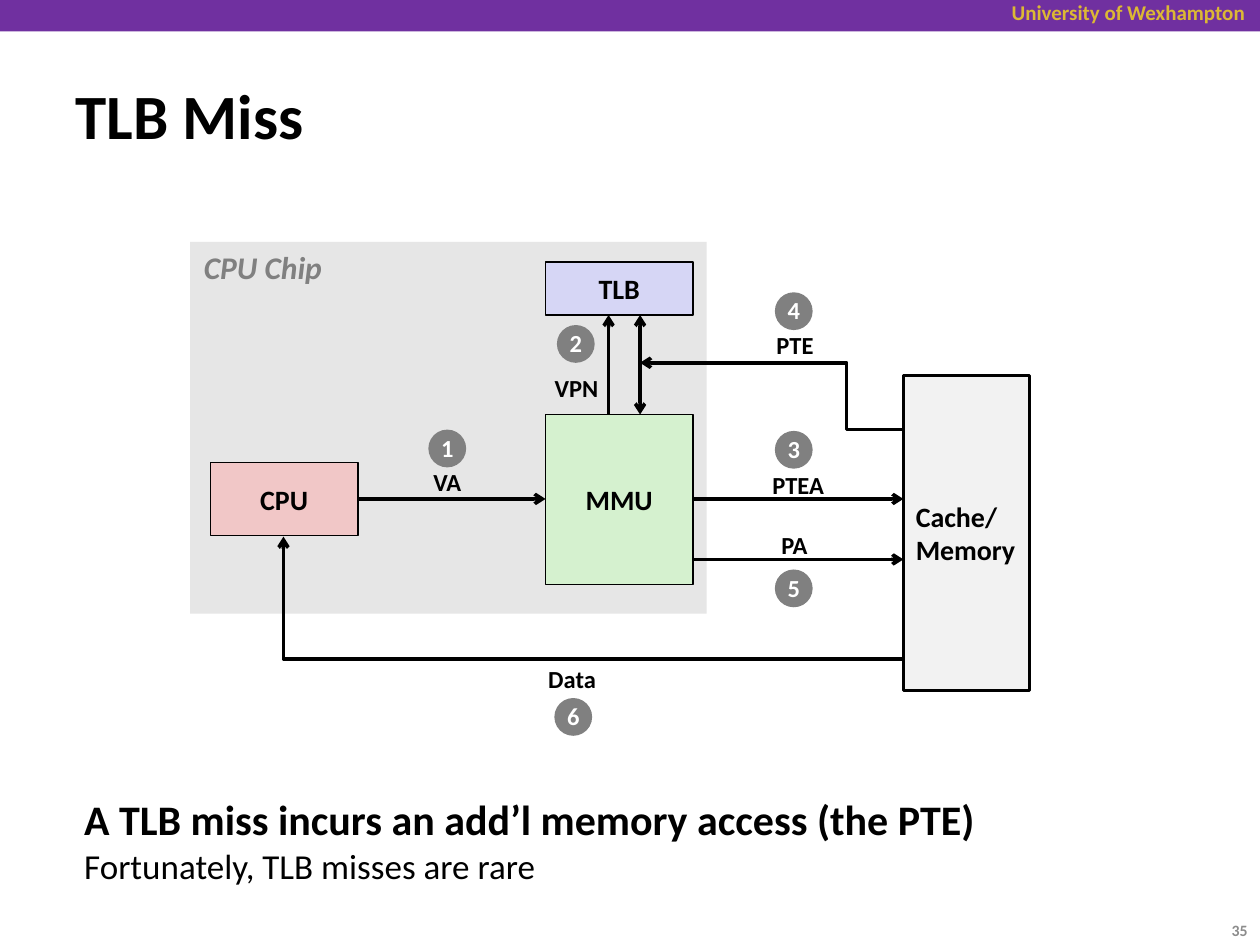
from lxml import etree
from pptx import Presentation
from pptx.dml.color import RGBColor
from pptx.enum.shapes import MSO_CONNECTOR as LINK, MSO_SHAPE as SHAPE
from pptx.enum.text import MSO_ANCHOR as ANCHOR, PP_ALIGN as ALIGN
from pptx.oxml.ns import qn
from pptx.util import Inches, Pt


def write(shape, text, size, color="000000", align=ALIGN.CENTER, anchor=ANCHOR.MIDDLE,
          bold=True, italic=False, wrap=False):
    """Write one paragraph per line of text, in one style."""
    frame = shape.text_frame
    frame.word_wrap = wrap
    frame.vertical_anchor = anchor
    for number, line in enumerate(text.split("\n")):
        paragraph = frame.add_paragraph() if number else frame.paragraphs[0]
        paragraph.alignment = align
        run = paragraph.add_run()
        run.text = line
        font = run.font
        font.name, font.size, font.bold, font.italic = "Calibri", Pt(size), bold, italic
        font.color.rgb = RGBColor.from_string(color)
    return frame


def block(kind, box, fill, outline=0):
    """Add a filled shape with a black outline of the given width, or none."""
    shape = slide.shapes.add_shape(kind, *map(Inches, box))
    shape.shadow.inherit = False
    shape.fill.solid()
    shape.fill.fore_color.rgb = RGBColor.from_string(fill)
    if outline:
        shape.line.color.rgb = RGBColor.from_string("000000")
        shape.line.width = Pt(outline)
    else:
        shape.line.fill.background()
    return shape


prs = Presentation()
prs.slide_width, prs.slide_height = Inches(10), Inches(7.5)
slide = prs.slides.add_slide(prs.slide_layouts[5])

# Header band
block(SHAPE.RECTANGLE, (0, 0, 10, 0.25), "7030A0")
header = slide.shapes.add_textbox(Inches(7.33), Inches(-0.05), Inches(2.65), Inches(0.3))
write(header, "University of Wexhampton", 12, "DCB834", ALIGN.RIGHT, ANCHOR.TOP, wrap=True)

# Title
title = slide.shapes.title
title.left, title.top, title.width, title.height = map(Inches, (0.5, 0.48, 9.53, 0.86))
write(title, "TLB Miss", 36, align=ALIGN.LEFT, wrap=True)

# CPU chip area
block(SHAPE.RECTANGLE, (1.51, 1.92, 4.1, 2.95), "E6E6E6")
chip = slide.shapes.add_textbox(Inches(1.52), Inches(1.92), Inches(1.16), Inches(0.4))
write(chip, "CPU Chip", 18, "808080", ALIGN.LEFT, ANCHOR.TOP, italic=True)

# Hardware units
units = [
    ("MMU", (4.33, 3.29, 1.17, 1.35), "D5F1CF", 1, ALIGN.CENTER),
    ("Cache/\nMemory", (7.17, 2.98, 1, 2.5), "F2F2F2", 1.5, ALIGN.LEFT),
    ("CPU", (1.67, 3.67, 1.17, 0.58), "F1C7C7", 1, ALIGN.CENTER),
    ("TLB", (4.33, 2.08, 1.17, 0.42), "D6D6F5", 1, ALIGN.CENTER),
]
for name, box, fill, outline, align in units:
    write(block(SHAPE.RECTANGLE, box, fill, outline), name, 16, align=align)

# Signal paths: preset, start, end, arrowheads, position of the bend
paths = [
    ("line", (2.84, 3.96), (4.33, 3.96), ["tailEnd"], None),             # VA
    ("line", (4.83, 3.29), (4.83, 2.5), ["tailEnd"], None),              # VPN
    ("line", (5.08, 2.5), (5.08, 3.29), ["headEnd", "tailEnd"], None),   # TLB and MMU
    ("line", (5.5, 3.96), (7.17, 3.96), ["tailEnd"], None),              # PTEA
    ("line", (5.5, 4.44), (7.17, 4.44), ["tailEnd"], None),              # PA
    ("bentConnector3", (7.17, 3.41), (5.08, 2.88), ["tailEnd"], 21600),  # PTE
    ("bentConnector2", (7.17, 5.23), (2.25, 4.26), ["tailEnd"], None),   # Data
]
for preset, start, end, heads, bend in paths:
    kind = LINK.STRAIGHT if preset == "line" else LINK.ELBOW
    path = slide.shapes.add_connector(kind, *map(Inches, start + end))
    path.line.color.rgb = RGBColor.from_string("000000")
    path.line.width = Pt(2)
    properties = path._element.spPr
    geometry = properties.find(qn("a:prstGeom"))
    geometry.set("prst", preset)
    if bend:
        guide = etree.SubElement(geometry.find(qn("a:avLst")), qn("a:gd"))
        guide.set("name", "adj1")
        guide.set("fmla", f"val {bend}")
    for head in heads:
        etree.SubElement(properties.find(qn("a:ln")), qn(f"a:{head}")).set("type", "arrow")
    etree.SubElement(properties, qn("a:effectLst"))

# Signal labels
labels = [
    ("VA", 3.34, 3.67, 0.42), ("VPN", 4.3, 2.92, 0.55), ("PTEA", 6.03, 3.69, 0.61),
    ("PTE", 6.06, 2.58, 0.5), ("PA", 6.1, 4.17, 0.41), ("Data", 4.25, 5.23, 0.58),
]
for signal, left, top, width in labels:
    label = slide.shapes.add_textbox(Inches(left), Inches(top), Inches(width), Inches(0.33))
    write(label, signal, 14).paragraphs[0].line_spacing = 0.98

# Numbered steps, in order
steps = [(3.4, 3.41), (4.42, 2.58), (6.15, 3.42), (6.15, 2.32), (6.15, 4.52), (4.4, 5.54)]
for number, (left, top) in enumerate(steps, 1):
    badge = block(SHAPE.OVAL, (left, top, 0.3, 0.3), "808080")
    write(badge, str(number), 14, "FFFFFF").paragraphs[0].line_spacing = 0.98

# Takeaway
takeaway = slide.shapes.add_textbox(Inches(0.57), Inches(6.25), Inches(8.43), Inches(1))
message = write(takeaway, "A TLB miss incurs an add’l memory access (the PTE)", 24,
                align=ALIGN.LEFT, anchor=ANCHOR.TOP, wrap=True).paragraphs[0]
message.add_line_break()
remark = message.add_run()
remark.text = "Fortunately, TLB misses are rare"
remark.font.name, remark.font.size, remark.font.bold = "Calibri", Pt(20), False
remark.font.color.rgb = RGBColor.from_string("000000")

# Page number
page = slide.shapes.add_textbox(Inches(9.33), Inches(7.18), Inches(0.67), Inches(0.4))
write(page, "35", 9, "8C8C8C", ALIGN.RIGHT, wrap=True)

prs.save("out.pptx")
